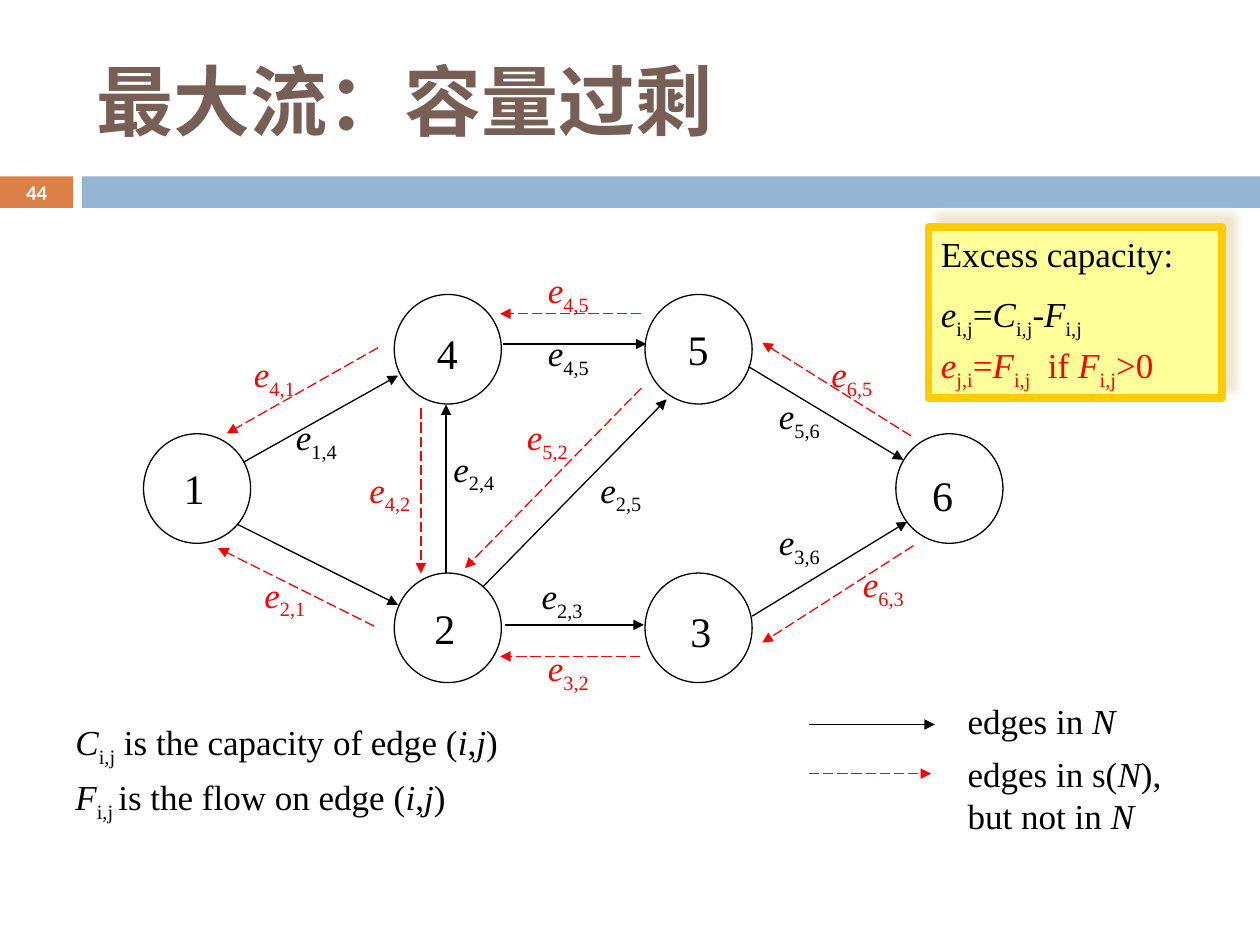
from dataclasses import dataclass

from lxml import etree
from pptx import Presentation
from pptx.dml.color import RGBColor
from pptx.enum.dml import MSO_LINE
from pptx.enum.shapes import MSO_CONNECTOR, MSO_SHAPE
from pptx.enum.text import MSO_ANCHOR, PP_ALIGN
from pptx.oxml.ns import qn
from pptx.util import Pt

STRAIGHT = MSO_CONNECTOR.STRAIGHT
LONG_DASH = MSO_LINE.LONG_DASH
RECTANGLE, OVAL = MSO_SHAPE.RECTANGLE, MSO_SHAPE.OVAL
TOP, MIDDLE = MSO_ANCHOR.TOP, MSO_ANCHOR.MIDDLE
LEFT, CENTER = PP_ALIGN.LEFT, PP_ALIGN.CENTER

SERIF, SANS = "Times New Roman", "Calibri"
BLACK, RED, WHITE = "000000", "FF0000", "FFFFFF"
NODE_WIDTH, NODE_HEIGHT = 61.2, 62.6
COLUMN_STEP, ROW_STEP = 143.3, 79.6
FIRST_COLUMN, FIRST_ROW = 82, 168.3


@dataclass
class Run:
    text: str
    italic: bool = False
    subscript: bool = False


@dataclass
class Paragraph:
    runs: list[Run]
    color: str = BLACK
    space_before: float = 0
    size: float = 20
    font: str = SERIF
    bold: bool = False
    align: PP_ALIGN = LEFT


@dataclass
class Node:
    name: str
    column: int
    row: int
    label_at: tuple[float, float]


@dataclass
class Edge:
    start: tuple[float, float]
    end: tuple[float, float]
    index: str = ""
    label_at: tuple[float, float] = (0, 0)


NODES = [
    Node("1", 0, 1, (97.9, 260.6)),
    Node("4", 1, 0, (242.6, 183.6)),
    Node("5", 2, 0, (385.9, 181.4)),
    Node("2", 1, 2, (241.2, 340.6)),
    Node("3", 2, 2, (387.4, 342.7)),
    Node("6", 3, 1, (525.6, 265)),
]
NETWORK_EDGES = [
    Edge((139, 264.2), (227.5, 214.6), "1,4", (162, 234)),
    Edge((135.4, 299.5), (227.5, 345.6)),
    Edge((287.3, 196.6), (369.4, 196.6), "4,5", (306, 186)),
    Edge((288.7, 357.1), (367.9, 357.1), "2,3", (302.4, 324.7)),
    Edge((275.8, 335.5), (380.9, 228.2), "2,5", (336, 264)),
    Edge((427.7, 209.5), (516.2, 262.8), "5,6", (438, 222)),
    Edge((429.8, 352.1), (518.4, 298.1), "3,6", (438, 294)),
    Edge((254.9, 327.6), (254.9, 231.1), "2,4", (252, 252)),
    Edge((462.2, 414), (534.2, 414)),
]
RESIDUAL_EDGES = [
    Edge((216, 198.7), (129.6, 247.7), "4,1", (138, 198)),
    Edge((213.8, 357.8), (124.6, 313.2), "2,1", (144, 324)),
    Edge((366.5, 179.3), (285.8, 179.3), "4,5", (306, 150)),
    Edge((366.5, 221.8), (265.7, 324.7), "5,2", (294, 234)),
    Edge((520.6, 249.1), (435.6, 195.8), "6,5", (468, 198)),
    Edge((522, 311.8), (435.6, 367.2), "6,3", (486, 318)),
    Edge((365.8, 375.1), (285.8, 375.1), "3,2", (306, 366)),
    Edge((240.5, 233.3), (240.5, 327.6), "4,2", (204, 264)),
    Edge((462.2, 442.1), (532.1, 442.1)),
]


def rgb(color: str) -> RGBColor:
    return RGBColor.from_string(color)


def italic(text: str) -> Run:
    return Run(text, italic=True)


def variable(letter: str, index: str) -> list[Run]:
    """Italic letter followed by its subscript."""
    return [italic(letter), Run(index, subscript=True)]


def edge_pair() -> list[Run]:
    return [Run("("), italic("i"), Run(","), italic("j"), Run(")")]


def write(shape, paragraphs: list[Paragraph], anchor=TOP) -> None:
    frame = shape.text_frame
    frame.word_wrap = True
    frame.vertical_anchor = anchor
    for number, content in enumerate(paragraphs):
        paragraph = frame.add_paragraph() if number else frame.paragraphs[0]
        paragraph.alignment = content.align
        paragraph.space_before = Pt(content.space_before)
        for part in content.runs:
            run = paragraph.add_run()
            run.text = part.text
            run.font.name = content.font
            run.font.size = Pt(content.size)
            run.font.bold = content.bold
            run.font.italic = part.italic
            run.font.color.rgb = rgb(content.color)
            if part.subscript:
                run._r.get_or_add_rPr().set("baseline", "-25000")


def add_text(slide, left: float, top: float, width: float, height: float,
             paragraphs: list[Paragraph], anchor=TOP) -> None:
    box = slide.shapes.add_textbox(Pt(left), Pt(top), Pt(width), Pt(height))
    write(box, paragraphs, anchor)


def add_shape(slide, kind, left: float, top: float, width: float, height: float,
              fill: str = "", line: str = "", line_width: float = 0.75):
    shape = slide.shapes.add_shape(kind, Pt(left), Pt(top), Pt(width), Pt(height))
    shape.shadow.inherit = False
    if fill:
        shape.fill.solid()
        shape.fill.fore_color.rgb = rgb(fill)
    else:
        shape.fill.background()
    if line:
        shape.line.color.rgb = rgb(line)
        shape.line.width = Pt(line_width)
    else:
        shape.line.fill.background()
    return shape


def add_outer_shadow(shape, color: str) -> None:
    effects = shape._element.spPr.find(qn("a:effectLst"))
    shadow = etree.SubElement(effects, qn("a:outerShdw"), blurRad=str(Pt(5)),
                              dist=str(Pt(8.5)), dir="18900000", algn="bl",
                              rotWithShape="0")
    tint = etree.SubElement(shadow, qn("a:srgbClr"), val=color)
    etree.SubElement(tint, qn("a:alpha"), val="75000")


def add_node(slide, node: Node) -> None:
    add_shape(slide, OVAL, FIRST_COLUMN + COLUMN_STEP * node.column,
              FIRST_ROW + ROW_STEP * node.row, NODE_WIDTH, NODE_HEIGHT, line=BLACK)
    add_text(slide, *node.label_at, 60.5, 36, [Paragraph([Run(node.name)], size=24)])


def add_edge(slide, edge: Edge, color: str, dashed: bool) -> None:
    arrow = slide.shapes.add_connector(STRAIGHT, *map(Pt, edge.start + edge.end))
    arrow.line.color.rgb = rgb(color)
    arrow.line.width = Pt(0.75)
    if dashed:
        arrow.line.dash_style = LONG_DASH
    etree.SubElement(arrow.line._get_or_add_ln(), qn("a:tailEnd"), type="triangle")
    etree.SubElement(arrow._element.spPr, qn("a:effectLst"))
    if edge.index:
        add_text(slide, *edge.label_at, 60, 31, [Paragraph(variable("e", edge.index), color)])


def main() -> None:
    presentation = Presentation()
    presentation.slide_width, presentation.slide_height = Pt(720), Pt(540)
    slide = presentation.slides.add_slide(presentation.slide_layouts[6])

    number_box = add_shape(slide, RECTANGLE, 0, 100.8, 41.8, 18, "DD8047")
    write(number_box, [Paragraph([Run("44")], WHITE, size=11.9, font=SANS,
                                 bold=True, align=CENTER)], MIDDLE)
    add_shape(slide, RECTANGLE, 46.8, 100.8, 673.2, 18, "94B6D2")
    add_text(slide, 48.2, 18, 642.2, 77.8,
             [Paragraph([Run("最大流：容量过剩")], "775F55", size=44, font=SANS, bold=True)],
             MIDDLE)

    for node in NODES:
        add_node(slide, node)
    for edge in NETWORK_EDGES:
        add_edge(slide, edge, BLACK, dashed=False)
    for edge in RESIDUAL_EDGES:
        add_edge(slide, edge, RED, dashed=True)

    add_text(slide, 36, 408.2, 365.8, 59.8, [
        Paragraph([*variable("C", "i,j"), Run(" is the capacity of edge "), *edge_pair()]),
        Paragraph([*variable("F", "i,j "), Run("is the flow on edge "), *edge_pair()],
                  space_before=4),
    ])
    add_text(slide, 545.8, 396, 138.2, 31, [Paragraph([Run("edges in "), italic("N")])])
    add_text(slide, 545.8, 426.2, 138.2, 55.4, [
        Paragraph([Run("edges in s("), italic("N"), Run("), but not in "), italic("N")])])

    capacity, flow = variable("C", "i,j"), variable("F", "i,j")
    excess_box = add_shape(slide, RECTANGLE, 530.6, 129.6, 167.8, 97.9, "FFFF99", "FFCC00", 4.5)
    add_outer_shadow(excess_box, "EBDDC3")
    write(excess_box, [
        Paragraph([Run("Excess capacity:")]),
        Paragraph([*variable("e", "i,j"), Run("="), *capacity, Run("-"), *flow],
                  space_before=10),
        Paragraph([*variable("e", "j,i"), Run("="), *flow, Run("  if "), *flow, Run(">0")],
                  RED, space_before=2),
    ])
    presentation.save("out.pptx")


if __name__ == "__main__":
    main()
